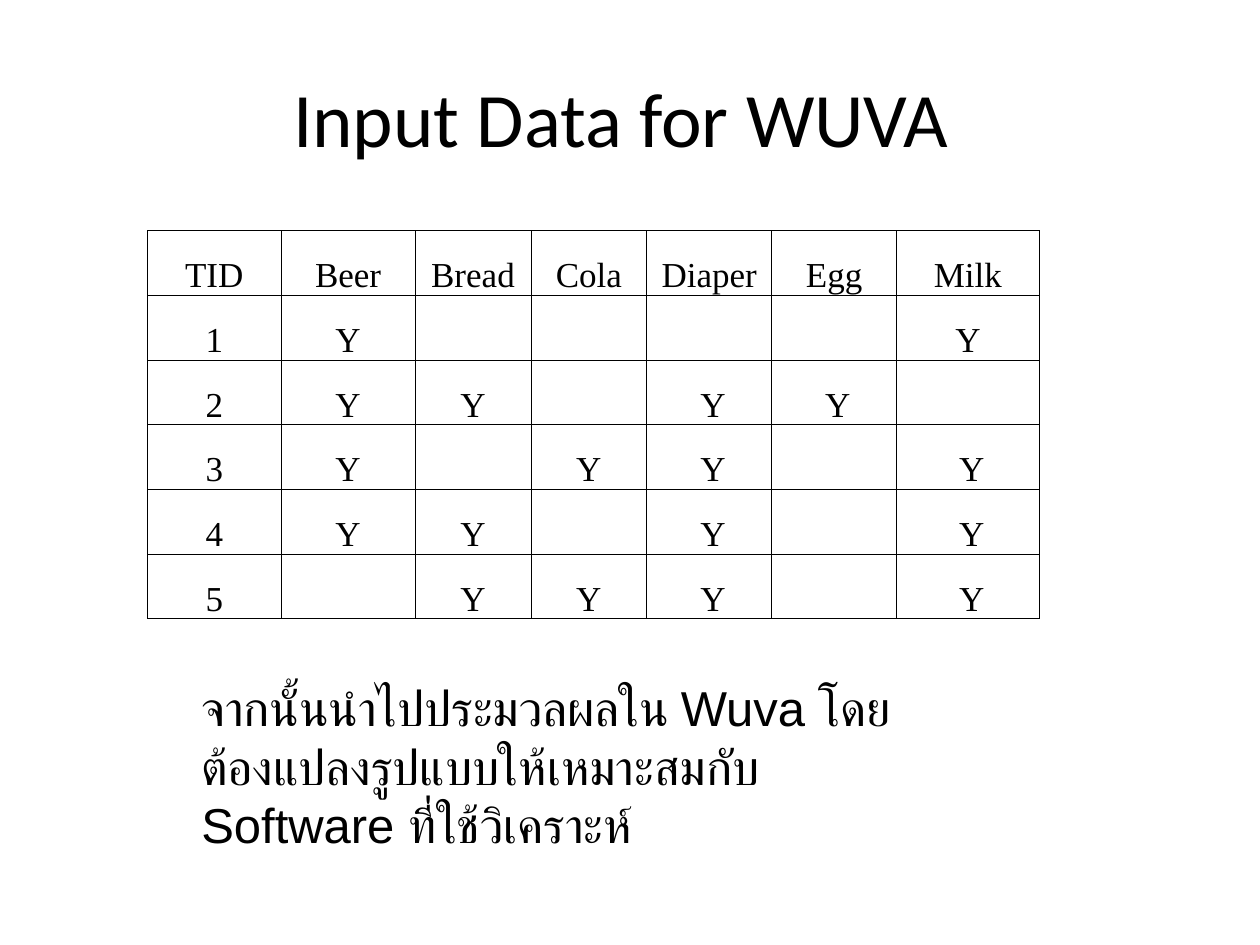
import pptx
import pptx.dml.color
import pptx.enum.text
import pptx.oxml
import pptx.oxml.ns
import pptx.util

INK = pptx.dml.color.RGBColor(0, 0, 0)
PAPER = pptx.dml.color.RGBColor(255, 255, 255)
WIDE, HIGH = pptx.util.Inches(10), pptx.util.Inches(7.5)
MID = pptx.enum.text.PP_ALIGN.CENTER
ANCHOR = pptx.enum.text.MSO_ANCHOR

SHARES = (0.15, 0.15, 0.13, 0.13, 0.14, 0.14, 0.16)
ROWS = (
    "TID|Beer|Bread|Cola|Diaper|Egg|Milk",
    "1|Y|||||Y",
    "2|Y|Y|| Y| Y|",
    "3|Y||Y| Y|| Y",
    "4|Y|Y|| Y|| Y",
    "5||Y|Y| Y|| Y",
)
NOTE = "จากนั้นนำไปประมวลผลใน Wuva โดยต้องแปลงรูปแบบให้เหมาะสมกับ Software ที่ใช้วิเคราะห์"


def area(left, top, width, height):
    """Turn shares of the slide into a box of lengths."""
    return int(left * WIDE), int(top * HIGH), int(width * WIDE), int(height * HIGH)


def style(para, name, size, align=None):
    """Set the font and alignment of a paragraph."""
    para.font.name = name
    para.font.size = pptx.util.Pt(size)
    para.font.bold = False
    para.font.color.rgb = INK
    para.alignment = align


def border(cell):
    """Draw a thin line on all four sides of a cell."""
    props = cell._tc.get_or_add_tcPr()
    for spot, side in enumerate(("lnL", "lnR", "lnT", "lnB")):
        props.insert(spot, pptx.oxml.parse_xml(
            f'<a:{side} {pptx.oxml.ns.nsdecls("a")} w="{pptx.util.Pt(0.5)}">'
            f'<a:solidFill><a:srgbClr val="{INK}"/></a:solidFill></a:{side}>'))


def title(slide, box):
    """Fill the title placeholder."""
    shape = slide.shapes.title
    shape.left, shape.top, shape.width, shape.height = box
    shape.text_frame.text = "Input Data for WUVA "
    shape.text_frame.vertical_anchor = ANCHOR.MIDDLE
    style(shape.text_frame.paragraphs[0], "Calibri", 44, MID)


def grid(slide, box):
    """Build the table of baskets."""
    table = slide.shapes.add_table(len(ROWS), len(SHARES), *box).table
    table.first_row = table.horz_banding = False
    for col, share in zip(table.columns, SHARES):
        col.width = int(box[2] * share)
    for row, line in enumerate(ROWS):
        for col, word in enumerate(line.split("|")):
            cell = table.cell(row, col)
            cell.text = word
            cell.fill.solid()
            cell.fill.fore_color.rgb = PAPER
            cell.vertical_anchor = ANCHOR.BOTTOM
            cell.margin_left = cell.margin_right = cell.margin_top = pptx.util.Inches(0.01)
            cell.margin_bottom = 0
            style(cell.text_frame.paragraphs[0], "Times New Roman", 20, MID)
            border(cell)


def note(slide, box):
    """Add the remark below the table."""
    frame = slide.shapes.add_textbox(*box).text_frame
    frame.word_wrap = True
    frame.auto_size = pptx.enum.text.MSO_AUTO_SIZE.SHAPE_TO_FIT_TEXT
    frame.text = NOTE
    style(frame.paragraphs[0], "Arial", 28)


def main():
    """Build and save the slide."""
    deck = pptx.Presentation()
    deck.slide_width, deck.slide_height = WIDE, HIGH
    slide = deck.slides.add_slide(deck.slide_layouts[5])
    title(slide, area(0.05, 0.04, 0.9, 1 / 6))
    grid(slide, area(0.117, 0.244, 0.708, 0.411))
    note(slide, area(0.15, 0.71, 0.6, 0.14))
    deck.save("out.pptx")


if __name__ == "__main__":
    main()
